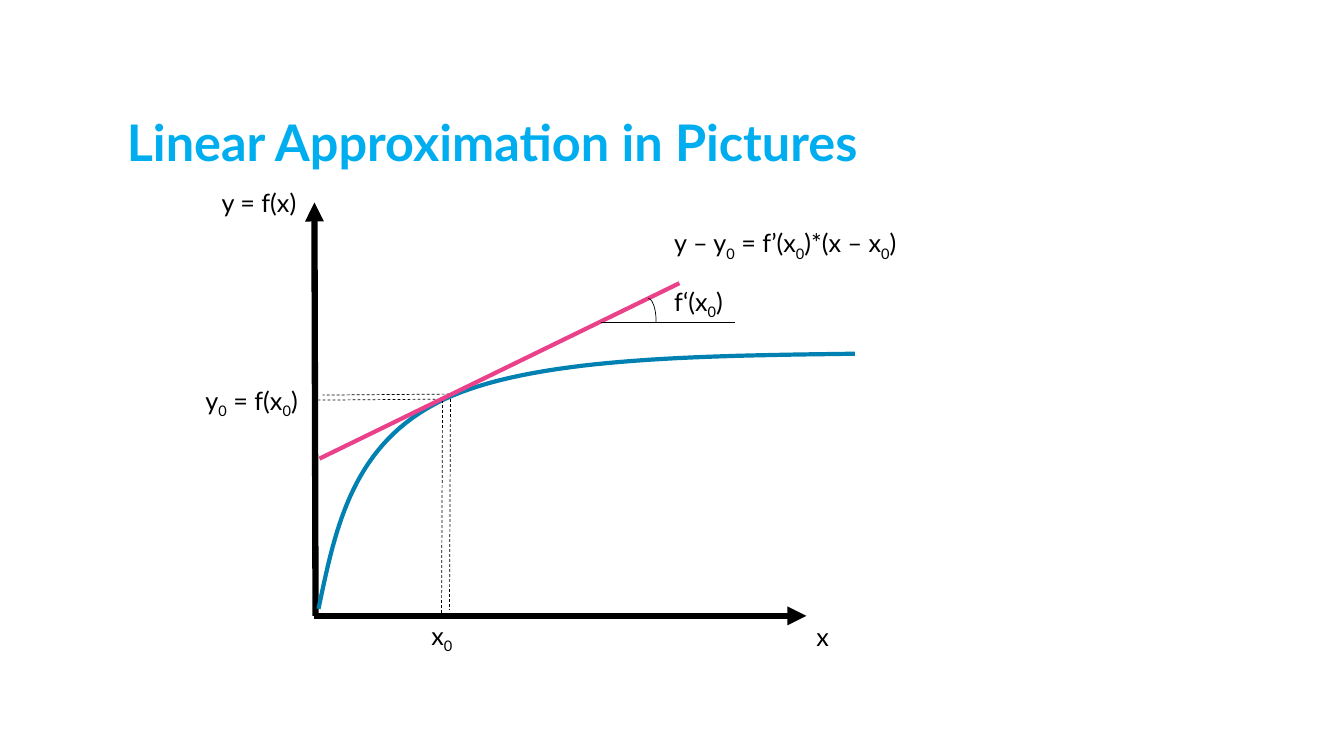
from dataclasses import dataclass

from lxml.etree import SubElement
from pptx import Presentation
from pptx.dml.color import RGBColor
from pptx.dml.line import LineFormat
from pptx.enum.dml import MSO_LINE_DASH_STYLE as Dash
from pptx.enum.shapes import MSO_CONNECTOR as Connector, MSO_SHAPE as Shape
from pptx.enum.text import MSO_ANCHOR as Anchor
from pptx.oxml.ns import qn
from pptx.shapes.shapetree import SlideShapes
from pptx.text.text import Font
from pptx.util import Pt

COLORS = {"title": "00AEEF", "ink": "000000", "curve": "0081B1", "tangent": "EA428A"}
FONT = "Lato"
LABEL_SIZE = 18
LABEL_HEIGHT = 29
THIN, BOLD, AXIS = 0.5, 3, 4.5
CURVE_STEPS = 32

Point = tuple[float, float]


@dataclass(frozen=True)
class Segment:
    start: Point
    end: Point
    weight: float = THIN
    color: str = "ink"
    dashed: bool = False
    arrow: bool = False


@dataclass(frozen=True)
class Label:
    text: str  # every second part between bars is a subscript
    left: float
    top: float
    width: float


AXES = [
    Segment((224.6, 439.9), (576, 439.9), AXIS, arrow=True),
    Segment((225.4, 439.9), (224.6, 144.7), AXIS, arrow=True),
]
# Bezier control points; neighbouring pieces share an end point
CURVE: list[Point] = [
    (227.5, 434.9), (239.8, 375.8), (252, 316.8), (316.1, 285.8),
    (379.4, 255.6), (494.6, 254.2), (610.6, 252.7),
]
GUIDES = [
    Segment((316.1, 285.8), (315.4, 439.9), dashed=True),
    Segment((318.2, 285.1), (227.5, 285.8), dashed=True),
    Segment((321.8, 281.5), (321.1, 435.6), dashed=True),
    Segment((321.1, 281.5), (230.4, 282.2), dashed=True),
]
TANGENT = Segment((228.2, 327.6), (485.3, 202.3), BOLD, "tangent")
SLOPE_BASE = Segment((429.1, 230.4), (524.9, 230.4))
LABELS = [
    Label("x", 576, 439.9, 33.8),
    Label("y = f(x)", 151.2, 130.3, 69.8),
    Label("x|0", 301, 439.2, 33.8),
    Label("y|0| = f(x|0|)", 139.7, 271.4, 81.4),
    Label("f‘(x|0|)", 474.5, 200.9, 51.1),
    Label("y – y|0| = f’(x|0|)*(x – x|0|)", 474.5, 159.1, 193),
]


def style_line(line: LineFormat, color: str, weight: float) -> None:
    line.color.rgb = RGBColor.from_string(COLORS[color])
    line.width = Pt(weight)


def style_font(font: Font, size: float, color: str, bold: bool = False) -> None:
    font.name = FONT
    font.size = Pt(size)
    font.bold = bold
    font.color.rgb = RGBColor.from_string(COLORS[color])


def draw_segment(shapes: SlideShapes, segment: Segment) -> None:
    ends = [Pt(value) for value in segment.start + segment.end]
    connector = shapes.add_connector(Connector.STRAIGHT, *ends)
    style_line(connector.line, segment.color, segment.weight)
    if segment.dashed:
        connector.line.dash_style = Dash.DASH
    properties = connector.element.spPr
    if segment.arrow:
        SubElement(properties.find(qn("a:ln")), qn("a:tailEnd"), type="triangle")
    SubElement(properties, qn("a:effectLst"))


def bezier_point(controls: list[Point], t: float) -> Point:
    weights = ((1 - t) ** 3, 3 * t * (1 - t) ** 2, 3 * t**2 * (1 - t), t**3)
    x, y = (sum(w * p[axis] for w, p in zip(weights, controls)) for axis in (0, 1))
    return Pt(x), Pt(y)


def draw_curve(shapes: SlideShapes) -> None:
    points = [
        bezier_point(CURVE[first:first + 4], step / CURVE_STEPS)
        for first in range(0, len(CURVE) - 1, 3)
        for step in range(1, CURVE_STEPS + 1)
    ]
    builder = shapes.build_freeform(*bezier_point(CURVE[:4], 0))
    builder.add_line_segments(points, close=False)
    function_graph = builder.convert_to_shape()
    function_graph.shadow.inherit = False
    function_graph.fill.background()
    style_line(function_graph.line, "curve", BOLD)


def draw_slope_angle(shapes: SlideShapes) -> None:
    angle = shapes.add_shape(Shape.ARC, Pt(457.2), Pt(213.1), Pt(11.5), Pt(33.8))
    angle.shadow.inherit = False
    angle.fill.background()
    style_line(angle.line, "ink", THIN)


def draw_label(shapes: SlideShapes, label: Label) -> None:
    box = shapes.add_textbox(Pt(label.left), Pt(label.top), Pt(label.width), Pt(LABEL_HEIGHT))
    frame = box.text_frame
    frame.word_wrap = True
    frame.margin_right = 0
    for index, part in enumerate(label.text.split("|")):
        run = frame.paragraphs[0].add_run()
        run.text = part
        style_font(run.font, LABEL_SIZE, "ink")
        if index % 2:
            run._r.get_or_add_rPr().set("baseline", "-25000")


def draw_title(shapes: SlideShapes) -> None:
    frame = shapes.add_textbox(Pt(83.5), Pt(41.8), Pt(684), Pt(84.2)).text_frame
    frame.word_wrap = True
    frame.vertical_anchor = Anchor.BOTTOM
    frame.text = "Linear Approximation in Pictures"
    heading = frame.paragraphs[0]
    heading.line_spacing = 0.8
    style_font(heading.runs[0].font, 36, "title", bold=True)


def main() -> None:
    deck = Presentation()
    deck.slide_width, deck.slide_height = Pt(960), Pt(540)
    shapes = deck.slides.add_slide(deck.slide_layouts[6]).shapes

    draw_title(shapes)

    # Axes and function graph
    for axis in AXES:
        draw_segment(shapes, axis)
    draw_curve(shapes)

    # Guides to the point of tangency, tangent and its slope
    for segment in [*GUIDES, TANGENT, SLOPE_BASE]:
        draw_segment(shapes, segment)
    draw_slope_angle(shapes)

    # Formulas
    for label in LABELS:
        draw_label(shapes, label)

    deck.save("out.pptx")


if __name__ == "__main__":
    main()
